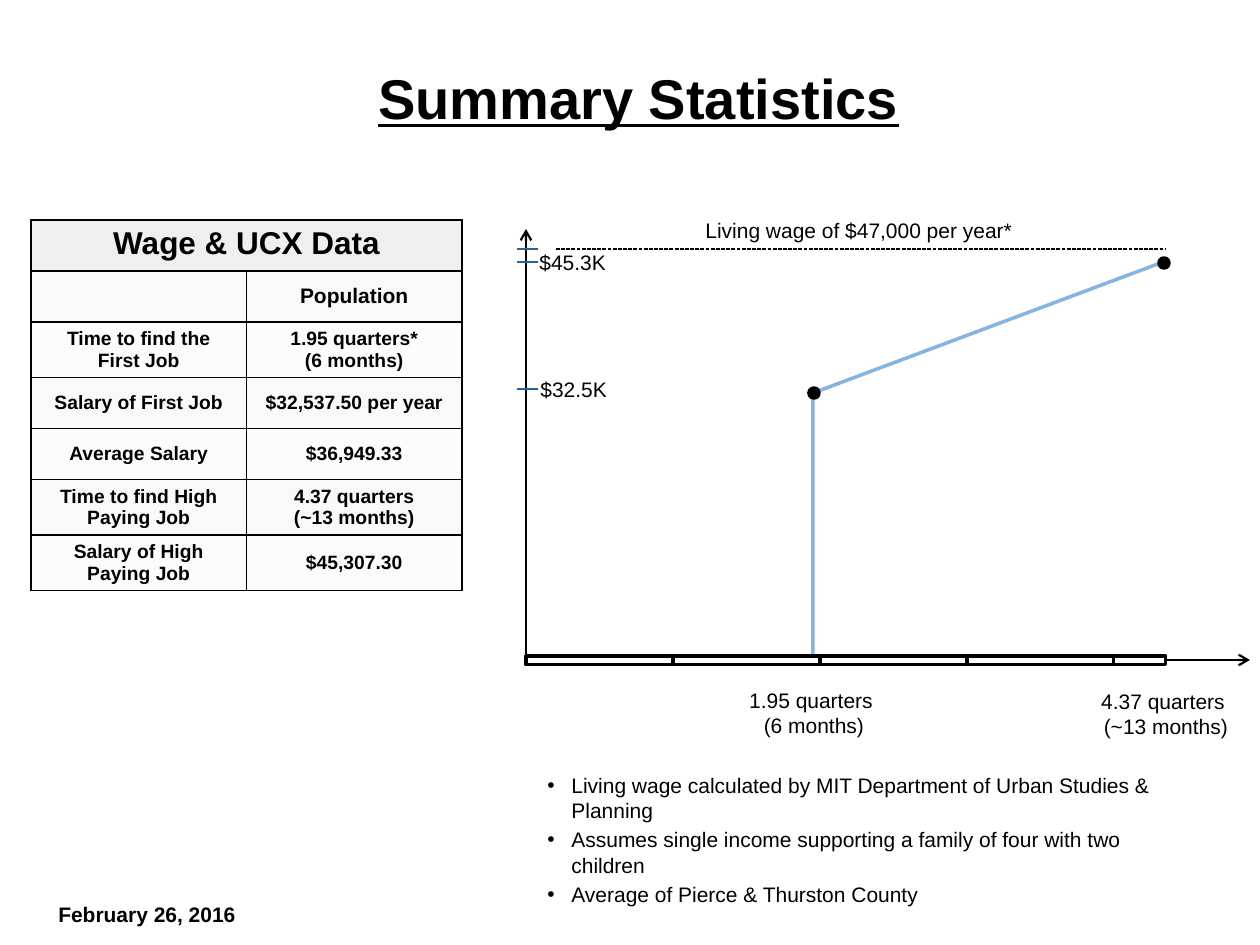
from dataclasses import dataclass

from lxml.etree import SubElement
from pptx import Presentation
from pptx.dml.color import RGBColor
from pptx.enum.dml import MSO_LINE
from pptx.enum.shapes import MSO_CONNECTOR, MSO_SHAPE
from pptx.enum.text import MSO_ANCHOR, MSO_AUTO_SIZE, PP_ALIGN
from pptx.oxml.ns import qn
from pptx.util import Emu, Pt

EMU_PER_PX = 914400 / 126
FONT = "Arial"

BLACK = RGBColor(0x00, 0x00, 0x00)
WHITE = RGBColor(0xFF, 0xFF, 0xFF)
TICK_BLUE = RGBColor(0x1F, 0x66, 0x9F)
CURVE_BLUE = RGBColor(0x83, 0xB4, 0xE4)
HEADER_GREY = RGBColor(0xEF, 0xEF, 0xEF)
ROW_GREYS = (RGBColor(0xFC, 0xFC, 0xFC), RGBColor(0xF9, 0xF9, 0xF9))

# Chart geometry
AXIS_X, AXIS_Y = 526, 660
AXIS_TOP, AXIS_RIGHT = 229, 1250
SEGMENT, BAR_END, BAR_HEIGHT = 147, 1166, 9
LIVING_WAGE_Y, HIGH_JOB_Y, FIRST_JOB_Y = 249, 262, 389
DOT = 10


@dataclass
class Line:
    start: tuple[int, int]
    end: tuple[int, int]
    color: RGBColor
    width: float
    arrow: bool = False
    dashed: bool = False


@dataclass
class Label:
    text: str
    left: int
    top: int
    width: int
    height: int
    align: PP_ALIGN = PP_ALIGN.LEFT
    bold: bool = False


LINES = [
    Line((AXIS_X, AXIS_Y), (AXIS_X, AXIS_TOP), BLACK, 1.25, arrow=True),
    Line((AXIS_X, AXIS_Y), (AXIS_RIGHT, AXIS_Y), BLACK, 1.25, arrow=True),
    Line((556, LIVING_WAGE_Y), (BAR_END, LIVING_WAGE_Y), BLACK, 0.75, dashed=True),
] + [
    Line((517, y), (538, y), TICK_BLUE, 1.5)
    for y in (LIVING_WAGE_Y, HIGH_JOB_Y, FIRST_JOB_Y)
]

LABELS = [
    Label("February 26, 2016", 0, 895, 294, 50, PP_ALIGN.CENTER, bold=True),
    Label("$45.3K", 527, 243, 176, 38),
    Label("$32.5K", 528, 370, 176, 38),
    Label("1.95 quarters \n(6 months)", 726, 681, 176, 63, PP_ALIGN.CENTER),
    Label("4.37 quarters \n(~13 months)", 1078, 682, 176, 63, PP_ALIGN.CENTER),
    Label("Living wage of $47,000 per year*", 693, 211, 336, 38),
]
NOTES = Label(
    "Living wage calculated by MIT Department of Urban Studies & Planning\n"
    "Assumes single income supporting a family of four with two children\n"
    "Average of Pierce & Thurston County",
    535, 766, 651, 149,
)

TABLE_ROWS = [
    ("Wage & UCX Data", ""),
    ("", "Population"),
    ("Time to find the First Job", "1.95 quarters*\n(6 months)"),
    ("Salary of First Job", "$32,537.50 per year"),
    ("Average Salary", "$36,949.33"),
    ("Time to find High Paying Job", "4.37 quarters\n(~13 months)"),
    ("Salary of High Paying Job", "$45,307.30"),
]


def px(value: int) -> Emu:
    return Emu(round(value * EMU_PER_PX))


def format_text(text_frame, size: float, bold: bool, align: PP_ALIGN) -> None:
    for paragraph in text_frame.paragraphs:
        paragraph.alignment = align
        for run in paragraph.runs:
            run.font.name = FONT
            run.font.size = Pt(size)
            run.font.bold = bold
            run.font.color.rgb = BLACK


def add_line(slide, line: Line) -> None:
    connector = slide.shapes.add_connector(
        MSO_CONNECTOR.STRAIGHT, *map(px, line.start + line.end))
    connector.line.color.rgb = line.color
    connector.line.width = Pt(line.width)
    if line.dashed:
        connector.line.dash_style = MSO_LINE.SQUARE_DOT
    if line.arrow:
        SubElement(connector.line._get_or_add_ln(), qn("a:tailEnd"), type="arrow")
    SubElement(connector._element.spPr, qn("a:effectLst"))


def add_solid(slide, kind, left: int, top: int, width: int, height: int,
              fill: RGBColor, line_width: float) -> None:
    shape = slide.shapes.add_shape(kind, px(left), px(top), px(width), px(height))
    shape.shadow.inherit = False
    shape.fill.solid()
    shape.fill.fore_color.rgb = fill
    shape.line.color.rgb = BLACK
    shape.line.width = Pt(line_width)


def add_label(slide, label: Label):
    box = slide.shapes.add_textbox(
        px(label.left), px(label.top), px(label.width), px(label.height))
    box.text_frame.word_wrap = True
    box.text_frame.text = label.text
    format_text(box.text_frame, 12, label.bold, label.align)
    return box.text_frame


def add_notes(slide) -> None:
    for index, paragraph in enumerate(add_label(slide, NOTES).paragraphs):
        properties = paragraph._p.get_or_add_pPr()
        properties.set("marL", str(px(24)))
        properties.set("indent", str(-px(24)))
        if index:
            paragraph.space_before = Pt(2.5)
        SubElement(properties, qn("a:buFont"), typeface=FONT)
        SubElement(properties, qn("a:buChar"), char="•")


def set_borders(cell) -> None:
    properties = cell._tc.get_or_add_tcPr()
    for position, side in enumerate(("lnL", "lnR", "lnT", "lnB")):
        border = properties.makeelement(qn(f"a:{side}"), {"w": str(Pt(1))})
        fill = SubElement(border, qn("a:solidFill"))
        SubElement(fill, qn("a:srgbClr"), val=str(BLACK))
        properties.insert(position, border)


def add_wage_table(slide) -> None:
    table = slide.shapes.add_table(
        len(TABLE_ROWS), 2, px(31), px(220), px(431), px(51 * len(TABLE_ROWS))).table
    table.first_row = table.horz_banding = False
    for row_index, texts in enumerate(TABLE_ROWS):
        size = {0: 18, 1: 12}.get(row_index, 11)
        for column_index, text in enumerate(texts):
            cell = table.cell(row_index, column_index)
            cell.text = text
            cell.fill.solid()
            cell.fill.fore_color.rgb = ROW_GREYS[row_index % 2] if row_index else HEADER_GREY
            cell.vertical_anchor = MSO_ANCHOR.MIDDLE if row_index else MSO_ANCHOR.TOP
            format_text(cell.text_frame, size, True, PP_ALIGN.CENTER)
            set_borders(cell)
    table.cell(0, 0).merge(table.cell(0, 1))


def add_title(slide) -> None:
    title = slide.shapes.title
    title.left, title.top, title.width, title.height = map(px, (108, 57, 1061, 126))
    frame = title.text_frame
    frame.text = "Summary Statistics"
    frame.auto_size = MSO_AUTO_SIZE.NONE
    frame.vertical_anchor = MSO_ANCHOR.TOP
    format_text(frame, 32, True, PP_ALIGN.CENTER)
    frame.paragraphs[0].runs[0].font.underline = True


def add_wage_chart(slide) -> None:
    # Wage curve
    builder = slide.shapes.build_freeform(813, AXIS_Y, scale=EMU_PER_PX)
    builder.add_line_segments([(813, 393), (1163, HIGH_JOB_Y)], close=False)
    curve = builder.convert_to_shape()
    curve.shadow.inherit = False
    curve.fill.background()
    curve.line.color.rgb = CURVE_BLUE
    curve.line.width = Pt(2)
    # Axes, ticks and living wage line
    for line in LINES:
        add_line(slide, line)
    # Quarter bar on the time axis
    for left in range(AXIS_X, BAR_END, SEGMENT):
        add_solid(slide, MSO_SHAPE.RECTANGLE, left, 656,
                  min(SEGMENT, BAR_END - left), BAR_HEIGHT, WHITE, 1.75)
    # Data points
    for left, top in ((809, 388), (1159, 258)):
        add_solid(slide, MSO_SHAPE.OVAL, left, top, DOT, DOT, BLACK, 2)


def main() -> None:
    presentation = Presentation()
    presentation.slide_width, presentation.slide_height = px(1260), px(945)
    slide = presentation.slides.add_slide(presentation.slide_layouts[5])
    add_title(slide)
    add_wage_table(slide)
    add_wage_chart(slide)
    for label in LABELS:
        add_label(slide, label)
    add_notes(slide)
    presentation.save("out.pptx")


if __name__ == "__main__":
    main()
